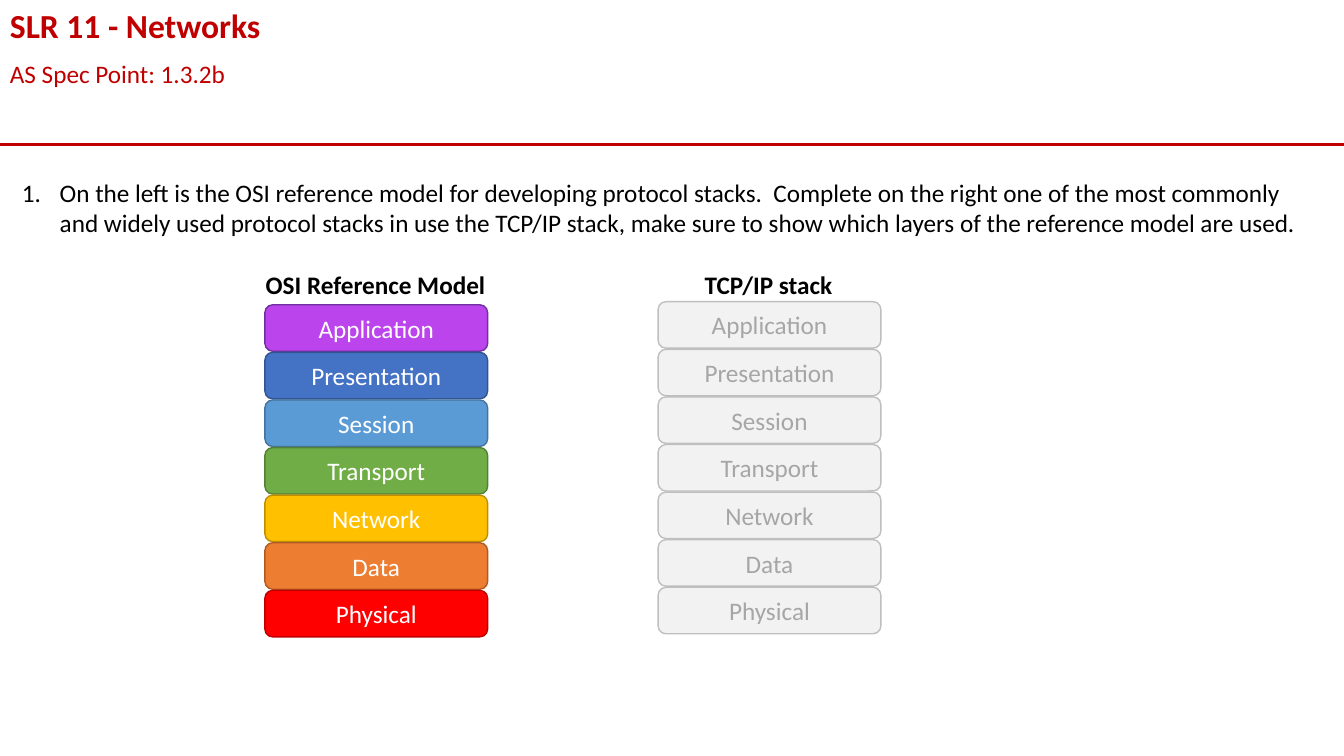
"""Build the networks worksheet slide comparing the OSI model with the TCP/IP stack."""
from lxml.etree import SubElement
from pptx import Presentation
from pptx.dml.color import RGBColor
from pptx.enum.shapes import MSO_CONNECTOR as Connector, MSO_SHAPE as Shape
from pptx.enum.text import MSO_ANCHOR as Anchor, MSO_AUTO_SIZE as AutoSize, PP_ALIGN as Align
from pptx.oxml.ns import qn
from pptx.util import Pt

COLOURS = {
    "red": "C00000", "black": "000000", "white": "FFFFFF",
    "pale": "F2F2F2", "outline": "BFBFBF", "grey": "A6A6A6",
    "Application": ("BC44EC", "7030A0"),
    "Presentation": ("4472C4", "325491"),
    "Session": ("5B9BD5", "43739E"),
    "Transport": ("70AD47", "538035"),
    "Network": ("FFC000", "BD8E00"),
    "Data": ("ED7D31", "AF5C24"),
    "Physical": ("FF0000", "C00000"),
}
LAYERS = ["Application", "Presentation", "Session", "Transport", "Network", "Data", "Physical"]
LAYER_WIDTH, LAYER_HEIGHT, LAYER_STEP = 159.1, 33.2, 34


def write(box, text, size=18, colour="black", bold=False, align=Align.LEFT, numbered=False):
    para = box.text_frame.paragraphs[0]
    para.alignment = align
    if numbered:
        properties = para._p.get_or_add_pPr()
        properties.set("marL", str(Pt(27)))
        properties.set("indent", str(Pt(-27)))
        SubElement(properties, qn("a:buFont"), typeface="+mj-lt")
        SubElement(properties, qn("a:buAutoNum"), type="arabicPeriod")
    span = para.add_run()
    span.text = text
    span.font.name = "Calibri"
    span.font.size = Pt(size)
    span.font.bold = bold
    span.font.color.rgb = RGBColor.from_string(COLOURS[colour])


deck = Presentation()
deck.slide_width, deck.slide_height = Pt(960), Pt(540)
page = deck.slides.add_slide(deck.slide_layouts[6])

rule = page.shapes.add_connector(Connector.STRAIGHT, Pt(0), Pt(103.5), Pt(960), Pt(103.5))
rule.line.color.rgb = RGBColor.from_string(COLOURS["red"])
rule.line.width = Pt(2.25)
SubElement(rule._element.spPr, qn("a:effectLst"))

question = (
    "On the left is the OSI reference model for developing protocol stacks.  "
    "Complete on the right one of the most commonly and widely used protocol stacks in use "
    "the TCP/IP stack, make sure to show which layers of the reference model are used."
)
texts = [
    ("AS Spec Point: 1.3.2b", 0, 38.2, 960, 29.1, True, {"colour": "red"}),
    ("SLR 11 - Networks", 0, 0, 960, 36.35, True, {"size": 24, "colour": "red", "bold": True}),
    (question, 8.6, 123.1, 941, 50.9, True, {"numbered": True}),
    ("OSI Reference Model", 182.7, 188.8, 172.5, 29.1, False, {"bold": True}),
    ("TCP/IP stack", 496.3, 188.8, 106.2, 29.1, False, {"bold": True}),
]
for text, left, top, width, height, wrap, style in texts:
    box = page.shapes.add_textbox(Pt(left), Pt(top), Pt(width), Pt(height))
    box.text_frame.word_wrap = wrap
    box.text_frame.auto_size = AutoSize.SHAPE_TO_FIT_TEXT
    write(box, text, **style)

for left, top, coloured in [(189.2, 217.7, True), (470.1, 215.5, False)]:
    stack = page.shapes.add_group_shape()
    for row, layer in enumerate(LAYERS):
        box = stack.shapes.add_shape(
            Shape.ROUNDED_RECTANGLE, Pt(left), Pt(top + row * LAYER_STEP),
            Pt(LAYER_WIDTH), Pt(LAYER_HEIGHT))
        fill, edge = COLOURS[layer] if coloured else (COLOURS["pale"], COLOURS["outline"])
        box.shadow.inherit = False
        box.fill.solid()
        box.fill.fore_color.rgb = RGBColor.from_string(fill)
        box.line.color.rgb = RGBColor.from_string(edge)
        box.line.width = Pt(1)
        box.text_frame.vertical_anchor = Anchor.MIDDLE
        write(box, layer, colour="white" if coloured else "grey", align=Align.CENTER)

deck.save("out.pptx")
